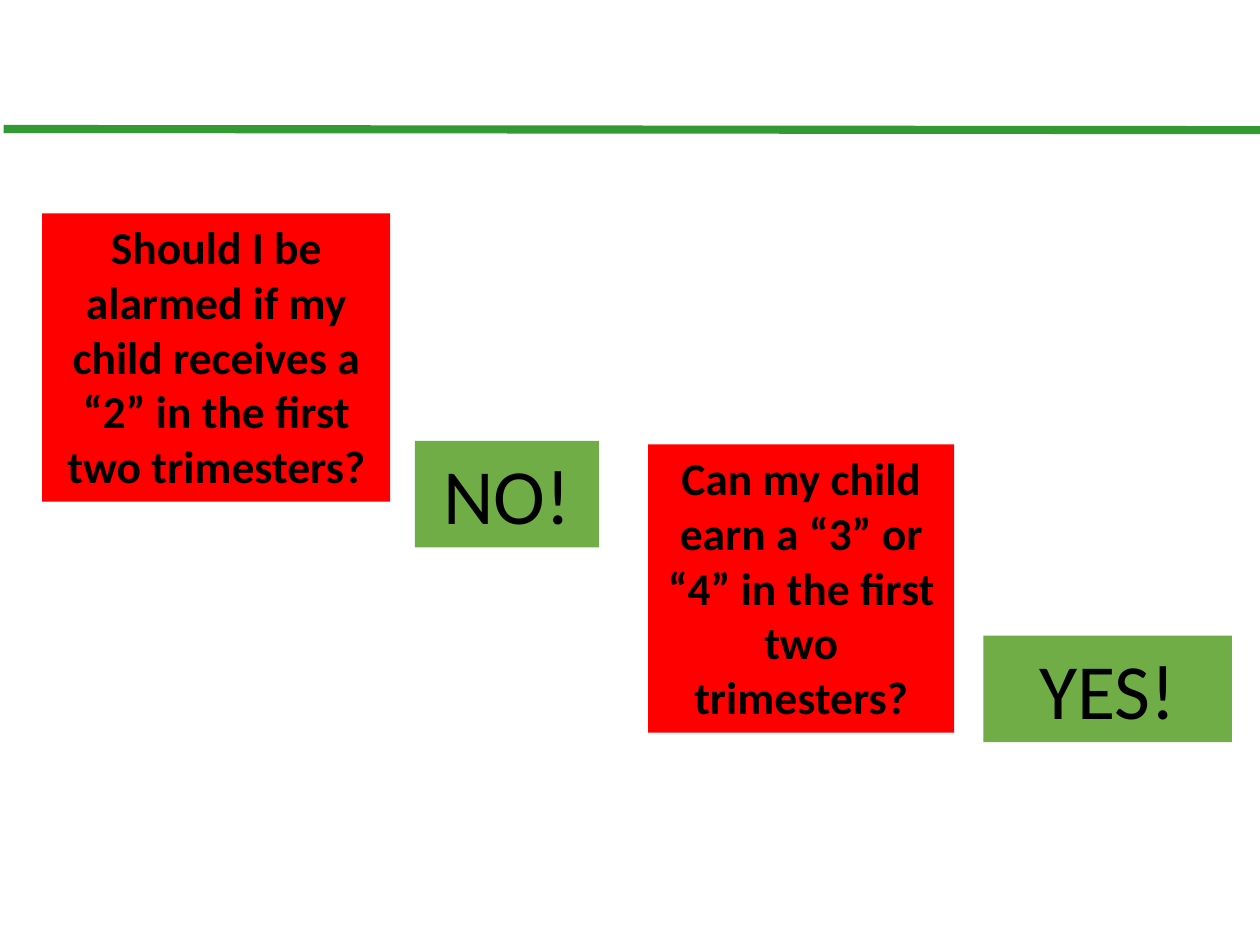
"""Builds a slide of two parent questions with their answers."""
from dataclasses import dataclass

from lxml import etree
from pptx import Presentation, util as u
from pptx.dml.color import RGBColor
from pptx.enum import shapes, text
from pptx.oxml.ns import qn

PX = u.Inches(1) // 100


@dataclass(frozen=True)
class Style:
    fill: str
    size: int
    bold: bool
    height: int


@dataclass(frozen=True)
class Theme:
    font: str = "Calibri"
    ink: str = "000000"
    rule: str = "339933"
    rule_width: int = 5
    question: Style = Style("FF0000", 28, True, 246)
    answer: Style = Style("70AD47", 48, False, 91)


@dataclass(frozen=True)
class Card:
    words: str
    left: int
    top: int
    width: int
    style: Style


THEME = Theme()
CARDS = (
    Card("YES!", 839, 542, 212, THEME.answer),
    Card("Should I be alarmed if my child receives a “2” in the first two trimesters?",
         36, 182, 297, THEME.question),
    Card("Can my child earn a “3” or “4” in the first two trimesters?",
         553, 379, 261, THEME.question),
    Card("NO!", 354, 376, 157, THEME.answer),
)


def px(n: int) -> u.Emu:
    return u.Emu(n * PX)


def draw_rule(s, x1: int, y1: int, x2: int, y2: int) -> None:
    rule = s.shapes.add_connector(shapes.MSO_CONNECTOR.STRAIGHT, px(x1), px(y1), px(x2), px(y2))
    rule.line.color.rgb = RGBColor.from_string(THEME.rule)
    rule.line.width = u.Pt(THEME.rule_width)
    etree.SubElement(rule._element.spPr, qn("a:effectLst"))


def draw_card(s, card: Card) -> None:
    style = card.style
    sp = s.shapes.add_shape(shapes.MSO_SHAPE.RECTANGLE, px(card.left), px(card.top),
                            px(card.width), px(style.height))
    sp.shadow.inherit = False
    sp.fill.solid()
    sp.fill.fore_color.rgb = RGBColor.from_string(style.fill)
    sp.line.fill.background()
    tf = sp.text_frame
    tf.word_wrap = True
    tf.auto_size = text.MSO_AUTO_SIZE.SHAPE_TO_FIT_TEXT
    tf.vertical_anchor = text.MSO_ANCHOR.TOP
    p = tf.paragraphs[0]
    p.text = card.words
    p.alignment = text.PP_ALIGN.CENTER
    p.font.name = THEME.font
    p.font.size = u.Pt(style.size)
    p.font.bold = style.bold
    p.font.color.rgb = RGBColor.from_string(THEME.ink)


def main() -> None:
    prs = Presentation()
    prs.slide_width, prs.slide_height = px(1075), px(800)
    s = prs.slides.add_slide(prs.slide_layouts[6])
    draw_rule(s, 3, 110, 1075, 111)
    for card in CARDS:
        draw_card(s, card)
    prs.save("out.pptx")


if __name__ == "__main__":
    main()
